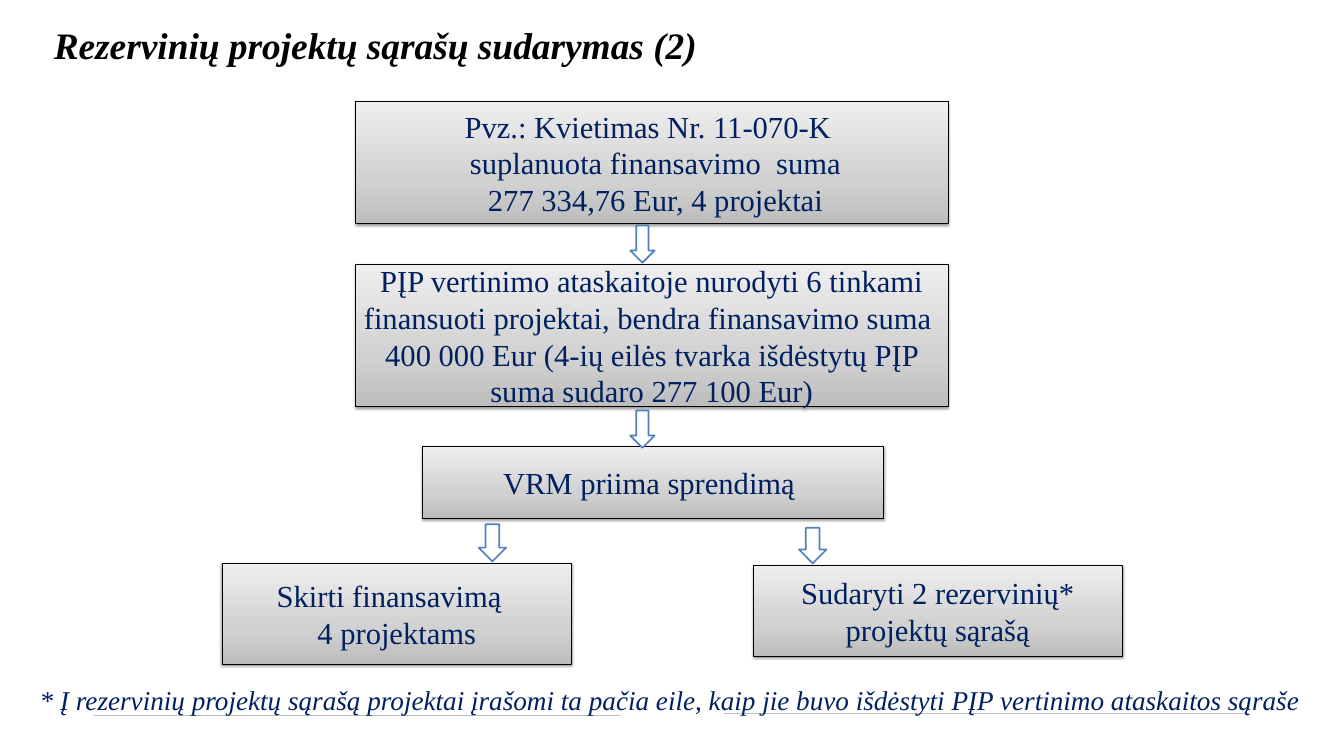
from lxml import etree
from pptx import Presentation
from pptx.dml.color import RGBColor
from pptx.enum.shapes import MSO_CONNECTOR, MSO_SHAPE
from pptx.enum.text import MSO_ANCHOR, PP_ALIGN
from pptx.oxml import parse_xml
from pptx.oxml.ns import qn
from pptx.util import Inches, Pt

RECTANGLE = MSO_SHAPE.RECTANGLE
DOWN_ARROW = MSO_SHAPE.DOWN_ARROW
STRAIGHT = MSO_CONNECTOR.STRAIGHT
MIDDLE, TOP = MSO_ANCHOR.MIDDLE, MSO_ANCHOR.TOP
CENTER, LEFT = PP_ALIGN.CENTER, PP_ALIGN.LEFT

BLACK = RGBColor(0x00, 0x00, 0x00)
WHITE = RGBColor(0xFF, 0xFF, 0xFF)
NAVY = RGBColor(0x00, 0x20, 0x60)
BLUE = RGBColor(0x4F, 0x81, 0xBD)
RULE_GRAY = RGBColor(0xBE, 0xBE, 0xBE)
BOX_STOPS = (
    (0, RGBColor(0xBD, 0xBD, 0xBD)),
    (35, RGBColor(0xD1, 0xD1, 0xD1)),
    (100, RGBColor(0xEE, 0xEE, 0xEE)),
)

FONT = "Times New Roman"
DRAWING_NS = 'xmlns:a="http://schemas.openxmlformats.org/drawingml/2006/main"'

STEPS = (
    ((5.81, 1.66, 9.7, 2),
     ("Pvz.: Kvietimas Nr. 11-070-K ",
      " suplanuota finansavimo  suma",
      " 277 334,76 Eur, 4 projektai")),
    ((5.81, 4.33, 9.7, 2.33),
     ("PĮP vertinimo ataskaitoje nurodyti 6 tinkami finansuoti projektai, "
      "bendra finansavimo suma ",
      "400 000 Eur (4-ių eilės tvarka išdėstytų PĮP suma sudaro 277 100 Eur)")),
    ((6.91, 7.3, 7.54, 1.19), ("VRM priima sprendimą ",)),
    ((3.63, 9.22, 5.72, 1.66), ("Skirti finansavimą  ", "4 projektams")),
    ((12.32, 9.25, 6.04, 1.49), ("Sudaryti 2 rezervinių* projektų sąrašą",)),
)
ARROWS = (
    (10.31, 3.69, 0.4, 0.61),
    (10.31, 6.72, 0.4, 0.61),
    (7.83, 8.58, 0.45, 0.61),
    (13.07, 8.64, 0.45, 0.58),
)
FOOTER_RULES = ((1.54, 11.7), (11.84, 11.68))
RULE_LENGTH = 8.6


def inches(lengths):
    return [Inches(length) for length in lengths]


def write_text(frame, paragraphs, size=36, color=NAVY, bold=False, italic=False,
               align=LEFT, anchor=TOP):
    frame.word_wrap = True
    frame.vertical_anchor = anchor
    for index, text in enumerate(paragraphs):
        paragraph = frame.paragraphs[0] if index == 0 else frame.add_paragraph()
        paragraph.alignment = align
        run = paragraph.add_run()
        run.text = text
        run.font.name = FONT
        run.font.size = Pt(size)
        run.font.bold = bold
        run.font.italic = italic
        run.font.color.rgb = color


def add_label(slide, bounds, text, inset=None, **text_format):
    frame = slide.shapes.add_textbox(*inches(bounds)).text_frame
    if inset is not None:
        frame.margin_left = frame.margin_right = Inches(inset)
        frame.margin_top = frame.margin_bottom = Inches(inset)
    write_text(frame, [text], **text_format)


def shade_box(box):
    """Give the box its upward three-stop gradient and a soft shadow below."""
    stops = "".join(
        f'<a:gs pos="{percent * 1000}"><a:srgbClr val="{color}"/></a:gs>'
        for percent, color in BOX_STOPS)
    gradient = parse_xml(
        f'<a:gradFill {DRAWING_NS} rotWithShape="1"><a:gsLst>{stops}</a:gsLst>'
        '<a:lin ang="16200000" scaled="0"/></a:gradFill>')
    shadow = parse_xml(
        f'<a:outerShdw {DRAWING_NS} blurRad="{Pt(3.1)}" dist="{Pt(1.6)}" '
        f'dir="5400000" rotWithShape="0"><a:srgbClr val="{BLACK}">'
        '<a:alpha val="38000"/></a:srgbClr></a:outerShdw>')
    properties = box._element.spPr
    properties.find(qn("a:prstGeom")).addnext(gradient)
    properties.find(qn("a:effectLst")).append(shadow)


def add_step(slide, bounds, paragraphs):
    box = slide.shapes.add_shape(RECTANGLE, *inches(bounds))
    box.shadow.inherit = False
    box.line.color.rgb = BLACK
    box.line.width = Pt(0.75)
    shade_box(box)
    write_text(box.text_frame, paragraphs, align=CENTER, anchor=MIDDLE)


def add_arrow(slide, bounds):
    arrow = slide.shapes.add_shape(DOWN_ARROW, *inches(bounds))
    arrow.shadow.inherit = False
    arrow.fill.solid()
    arrow.fill.fore_color.rgb = WHITE
    arrow.line.color.rgb = BLUE
    arrow.line.width = Pt(2)


def add_rule(slide, left, top):
    rule = slide.shapes.add_connector(
        STRAIGHT, *inches((left, top, left + RULE_LENGTH, top)))
    rule.line.color.rgb = RULE_GRAY
    rule.line.width = Pt(0.4)
    etree.SubElement(rule._element.spPr, qn("a:effectLst"))


def main():
    presentation = Presentation()
    presentation.slide_width = Pt(1583)
    presentation.slide_height = Pt(891)
    slide = presentation.slides.add_slide(presentation.slide_layouts[6])

    for left, top in FOOTER_RULES:
        add_rule(slide, left, top)
    add_label(slide, (0.88, 0.37, 18.5, 0.74),
              "Rezervinių projektų sąrašų sudarymas (2)",
              inset=0, size=44, color=BLACK, bold=True, italic=True)
    for bounds, paragraphs in STEPS:
        add_step(slide, bounds, paragraphs)
    for bounds in ARROWS:
        add_arrow(slide, bounds)
    add_label(slide, (0.55, 11.13, 20.89, 0.64),
              "* Į rezervinių projektų sąrašą projektai įrašomi ta pačia eile, "
              "kaip jie buvo išdėstyti PĮP vertinimo ataskaitos sąraše",
              size=32, italic=True)

    presentation.save("out.pptx")


if __name__ == "__main__":
    main()
